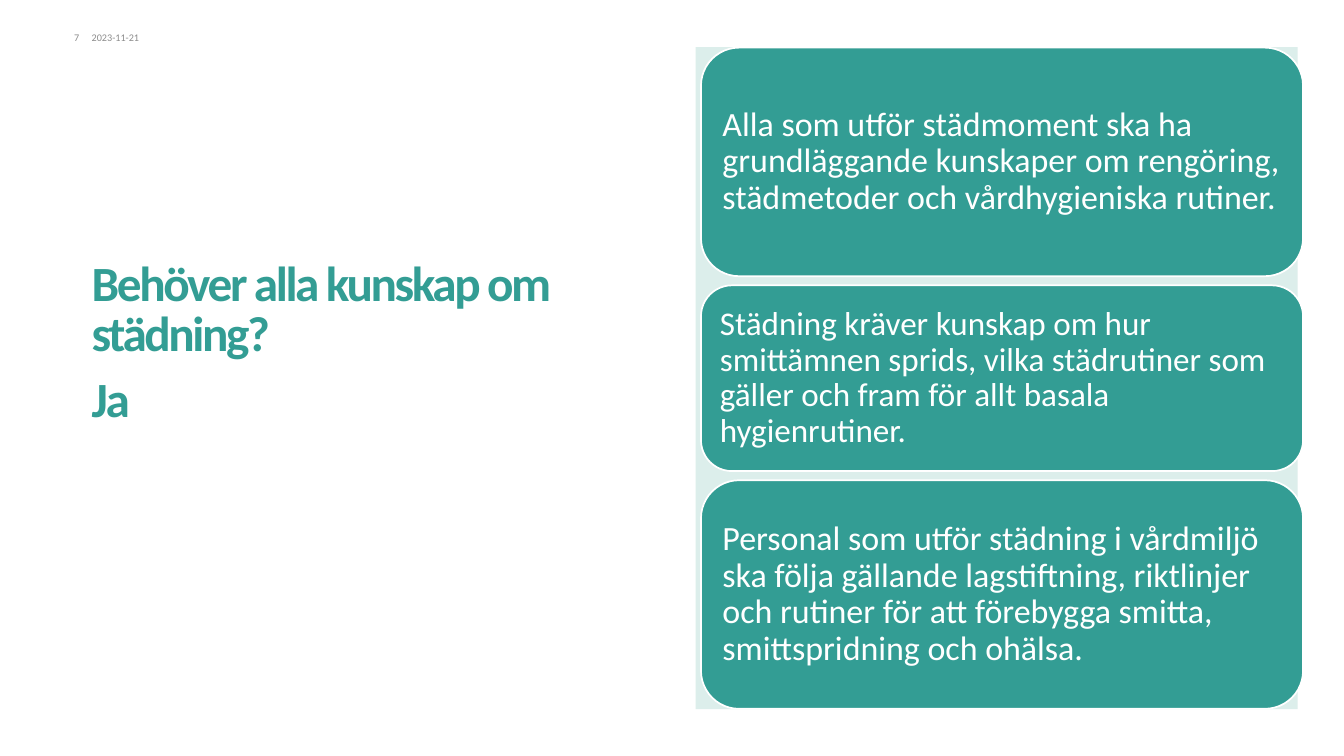
import pptx
import pptx.util
import pptx.dml.color
import pptx.enum.shapes
import pptx.enum.text
from dataclasses import dataclass

Cm = pptx.util.Cm
Pt = pptx.util.Pt
Kind = pptx.enum.shapes.MSO_SHAPE
Side = pptx.enum.text.PP_ALIGN
Anchor = pptx.enum.text.MSO_ANCHOR

TITLE = ["Behöver alla kunskap om städning? ", "", "Ja"]
DATE = "2023-11-21"
PAGE = "7"
CARDS = [
    ("Alla som utför städmoment ska ha grundläggande kunskaper om rengöring, "
     "städmetoder och vårdhygieniska rutiner.", 9.5, 40, 0.43),
    ("Städning kräver kunskap om hur smittämnen sprids, vilka städrutiner som "
     "gäller och fram för allt basala hygienrutiner.", 7.72, 39, 0.41),
    ("Personal som utför städning i vårdmiljö ska följa gällande lagstiftning, "
     "riktlinjer och rutiner för att förebygga smitta, smittspridning och ohälsa.",
     9.5, 40, 0.43),
]


@dataclass(frozen=True)
class Theme:
    font: str = "Calibri"
    teal: str = "339D94"
    pale: str = "DCEEEB"
    gray: str = "8C8C8C"
    white: str = "FFFFFF"
    head: int = 58
    small: int = 12
    track: int = -280


THEME = Theme()


def color(code):
    return pptx.dml.color.RGBColor.from_string(code)


def add_run(para, text, size, code, bold=False):
    run = para.add_run()
    run.text = text
    run.font.name = THEME.font
    run.font.size = Pt(size)
    run.font.bold = bold
    run.font.color.rgb = color(code)
    return run


def set_frame(frame, anchor, inset=0, base=0):
    frame.word_wrap = True
    frame.vertical_anchor = anchor
    frame.margin_left = frame.margin_right = frame.margin_top = Cm(inset)
    frame.margin_bottom = Cm(base or inset)
    return frame.paragraphs[0]


def add_box(slide, left, top, width, height, anchor, base=0):
    box = slide.shapes.add_textbox(Cm(left), Cm(top), Cm(width), Cm(height))
    return set_frame(box.text_frame, anchor, base=base)


def add_panel(slide, kind, left, top, width, height, fill):
    panel = slide.shapes.add_shape(kind, Cm(left), Cm(top), Cm(width), Cm(height))
    panel.shadow.inherit = False
    panel.fill.solid()
    panel.fill.fore_color.rgb = color(fill)
    panel.line.fill.background()
    return panel


def add_title(slide):
    para = add_box(slide, 3.81, 12.32, 21.74, 5.66, Anchor.BOTTOM, 0.2)
    para.line_spacing = 0.85
    for index, line in enumerate(TITLE):
        if index:
            para.add_line_break()
        run = add_run(para, line, THEME.head, THEME.teal, True)
        run.font._element.set("spc", str(THEME.track))
    for rest in para._p.findall(pptx.oxml.ns.qn("a:br")):
        props = rest.get_or_add_rPr() if hasattr(rest, "get_or_add_rPr") else None
        if props is None:
            props = pptx.oxml.parse_xml(
                f'<a:rPr {pptx.oxml.ns.nsdecls("a")} sz="{THEME.head * 100}"/>')
            rest.append(props)


def add_cards(slide):
    left, top, width, gap = 29.13, 1.98, 25.02, 0.38
    for text, height, size, inset in CARDS:
        card = add_panel(slide, Kind.ROUNDED_RECTANGLE, left, top, width, height,
                         THEME.teal)
        card.line.color.rgb = color(THEME.white)
        card.line.width = Pt(2)
        para = set_frame(card.text_frame, Anchor.MIDDLE, inset)
        para.alignment = Side.LEFT
        para.line_spacing = 0.9
        add_run(para, text, size, THEME.white)
        top += height + gap


def main():
    deck = pptx.Presentation()
    deck.slide_width, deck.slide_height = Cm(55.85), Cm(31.42)
    slide = deck.slides.add_slide(deck.slide_layouts[6])
    add_panel(slide, Kind.RECTANGLE, 28.91, 1.96, 25.02, 27.51, THEME.pale)
    for text, left, width, side in [(DATE, 3.81, 2.21, Side.LEFT),
                                    (PAGE, 2.31, 0.99, Side.RIGHT)]:
        para = add_box(slide, left, 1.32, width, 0.51, Anchor.TOP)
        para.alignment = side
        add_run(para, text, THEME.small, THEME.gray)
    add_title(slide)
    add_cards(slide)
    deck.save("out.pptx")


if __name__ == "__main__":
    main()
